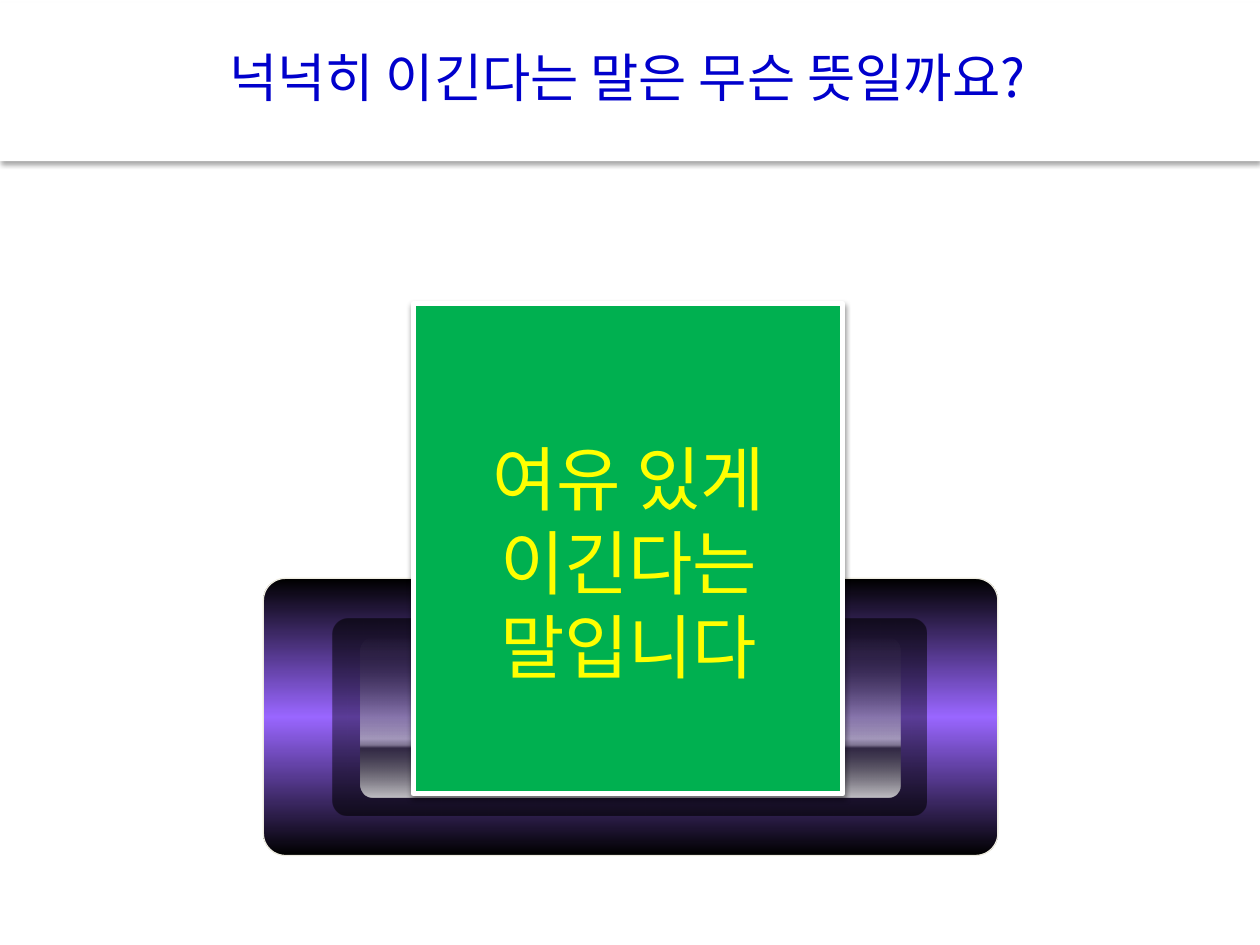
from lxml import etree
from pptx import Presentation
from pptx.dml.color import RGBColor
from pptx.enum.shapes import MSO_SHAPE
from pptx.enum.text import PP_ALIGN
from pptx.oxml.ns import qn
from pptx.util import Inches, Pt

RECT = MSO_SHAPE.RECTANGLE
ROUND = MSO_SHAPE.ROUNDED_RECTANGLE
CENTER = PP_ALIGN.CENTER

FONT = "Noto Sans CJK KR"
COLORS = {
    "white": "FFFFFF", "black": "000000", "violet": "9966FF",
    "cream": "EEECE1", "green": "00B050", "blue": "0000CC",
    "yellow": "FFFF00",
}
FRAME = [(0, "000000", 100), (50, COLORS["violet"], 100), (100, "000000", 100)]
SLOT = [(0, "000000", 60), (50, "000000", 40), (100, "000000", 60)]
GLASS = [
    (0, "CBCBCB", 0), (13, "5F5F5F", 10), (21, "5F5F5F", 17),
    (63, "FFFFFF", 50), (67, "B2B2B2", 54), (69, "292929", 55),
    (82, "777777", 66), (100, "EAEAEA", 80),
]


def add_node(parent, tag, **attrs):
    return etree.SubElement(parent, qn(tag), {k: str(v) for k, v in attrs.items()})


def add_color(parent, color, alpha):
    node = add_node(parent, "a:srgbClr", val=color)
    add_node(node, "a:alpha", val=alpha * 1000)


class Deck:
    def __init__(self):
        self.prs = Presentation()
        self.prs.slide_width = Inches(10)
        self.prs.slide_height = Inches(7.5)
        self.slide = self.prs.slides.add_slide(self.prs.slide_layouts[6])

    def panel(self, kind, box, fill=None, line=None, width=0):
        shape = self.slide.shapes.add_shape(kind, *map(Inches, box))
        shape.shadow.inherit = False
        if kind == ROUND:
            shape.adjustments[0] = 0.08
        if fill:
            shape.fill.solid()
            shape.fill.fore_color.rgb = RGBColor.from_string(COLORS[fill])
        if line:
            shape.line.color.rgb = RGBColor.from_string(COLORS[line])
            shape.line.width = Pt(width)
        else:
            shape.line.fill.background()
        return shape

    def fade(self, box, stops, **line):
        """Rounded panel shaded downwards; a stop is (place, color, opacity)."""
        shape = self.panel(ROUND, box, **line)
        shape.fill.gradient()
        shape.fill.gradient_angle = 270
        group = shape.element.spPr.find(qn("a:gradFill")).find(qn("a:gsLst"))
        for old in list(group):
            group.remove(old)
        for place, color, alpha in stops:
            add_color(add_node(group, "a:gs", pos=place * 1000), color, alpha)

    def shade(self, shape, alpha, dist):
        effects = shape.element.spPr.find(qn("a:effectLst"))
        node = add_node(effects, "a:outerShdw", blurRad=Pt(3.1), dist=Pt(dist),
                        dir=5400000, algn="t", rotWithShape=0)
        add_color(node, COLORS["black"], alpha)

    def text(self, box, words, size, color):
        frame = self.slide.shapes.add_textbox(*map(Inches, box)).text_frame
        frame.word_wrap = True
        frame.text = words
        for para in frame.paragraphs:
            para.alignment = CENTER
            para.line_spacing = Pt(size * 1.2)
            for run in para.runs:
                run.font.size = Pt(size)
                run.font.name = FONT
                run.font.color.rgb = RGBColor.from_string(COLORS[color])
                add_node(run.font._element, "a:ea", typeface=FONT)


def main():
    deck = Deck()
    band = deck.panel(RECT, (0, 0.02, 10, 1.26), "white")
    deck.shade(band, 35, 1.8)
    deck.text((0.04, 0.31, 9.88, 0.61), "넉넉히 이긴다는 말은 무슨 뜻일까요?", 30, "blue")

    deck.fade((2.09, 4.59, 5.83, 2.2), FRAME, line="cream", width=0.75)
    deck.fade((2.64, 4.91, 4.71, 1.56), SLOT)
    deck.fade((2.86, 5.06, 4.29, 1.27), GLASS)

    card = deck.panel(RECT, (3.28, 2.41, 3.41, 3.89), "green", "white", 3)
    deck.shade(card, 38, 1.6)
    deck.text((3.45, 3.41, 3.08, 2.1), "여유 있게\n이긴다는 말입니다", 40, "yellow")
    deck.prs.save("out.pptx")


if __name__ == "__main__":
    main()
